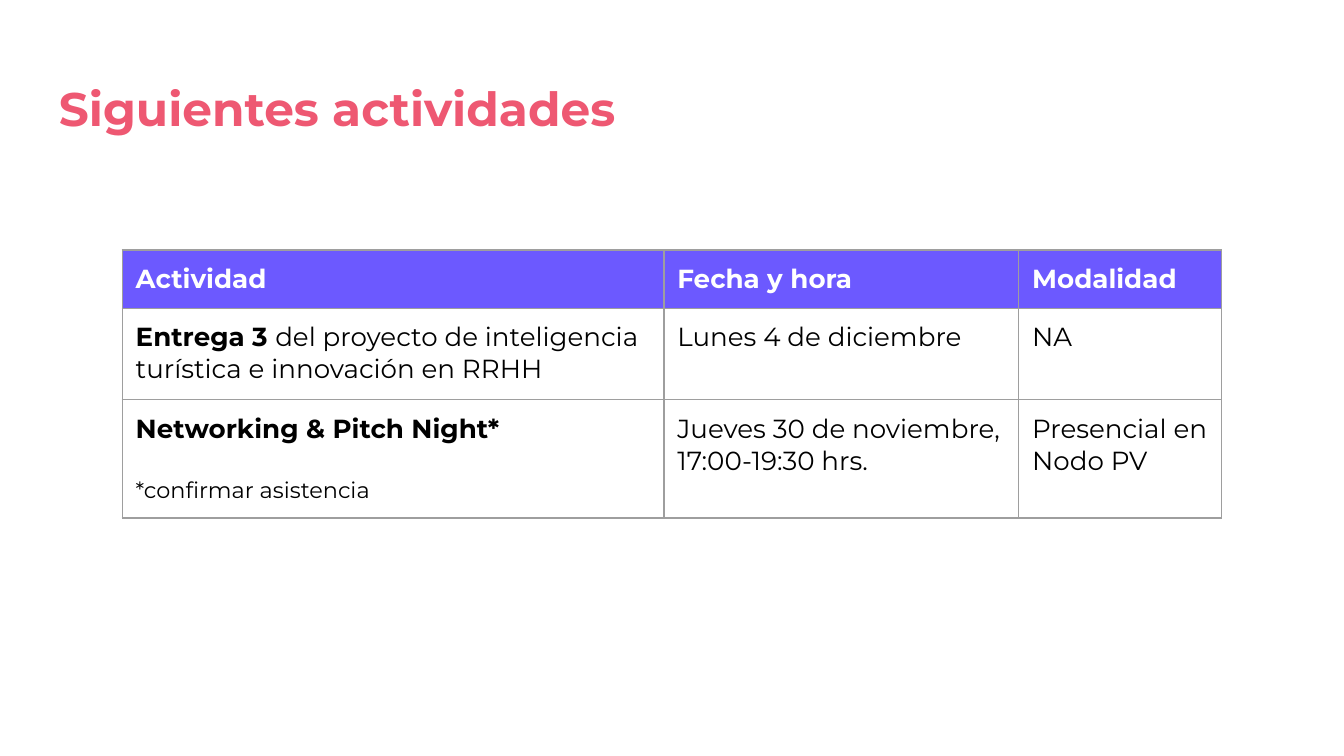
from typing import NamedTuple

from lxml import etree
from pptx import Presentation
from pptx import util as u
from pptx.dml.color import RGBColor
from pptx.enum import text
from pptx.oxml.ns import qn

WIDTH = 10
HEIGHT = WIDTH * 9 / 16
FONT = "Montserrat"
CORAL, VIOLET, WHITE, BLACK, GREY = "EE5872", "6C59FF", "FFFFFF", "000000", "9E9E9E"
INSET = u.Inches(0.1)


class Span(NamedTuple):
    words: str
    bold: bool = False
    size: float = 14


class Activity(NamedTuple):
    """One table row: the name is a list of paragraphs, each a list of spans."""
    name: list[list[Span]]
    date: str
    mode: str
    height: float


HEADINGS = ["Actividad", "Fecha y hora", "Modalidad"]
COLUMN_WIDTHS = [4.03, 2.64, 1.51]
TABLE_LEFT, TABLE_TOP = 0.91, 1.86
HEADER_HEIGHT = 0.43
ACTIVITIES = [
    Activity([[Span("Entrega 3 ", bold=True),
               Span("del proyecto de inteligencia turística e innovación en RRHH")]],
             "Lunes 4 de diciembre", "NA", 0.68),
    Activity([[Span("Networking & Pitch Night*", bold=True)],
              [Span("*confirmar asistencia", size=12)]],
             "Jueves 30 de noviembre, 17:00-19:30 hrs.", "Presencial en Nodo PV", 0.88),
]


def color(value: str) -> RGBColor:
    return RGBColor.from_string(value)


def write(frame, paragraphs: list[list[Span]], *, ink: str = BLACK, gap: float = 17) -> None:
    """Fill a text frame; gap is the space in points between paragraphs."""
    frame.word_wrap = True
    for index, spans in enumerate(paragraphs):
        para = frame.add_paragraph() if index else frame.paragraphs[0]
        para.alignment = text.PP_ALIGN.LEFT
        if index:
            para.space_before = u.Pt(gap)
        for span in spans:
            run = para.add_run()
            run.text = span.words
            run.font.name = FONT
            run.font.size = u.Pt(span.size)
            run.font.bold = span.bold
            run.font.color.rgb = color(ink)


def add_borders(cell, line: str, points: float) -> None:
    properties = cell._tc.get_or_add_tcPr()
    for side in ("lnL", "lnR", "lnT", "lnB"):
        edge = etree.SubElement(properties, qn(f"a:{side}"), w=str(u.Pt(points)))
        fill = etree.SubElement(edge, qn("a:solidFill"))
        etree.SubElement(fill, qn("a:srgbClr"), val=line)


def fill_cell(cell, paragraphs: list[list[Span]], *, ink: str = BLACK,
              background: str | None = None) -> None:
    cell.margin_left = cell.margin_right = cell.margin_top = cell.margin_bottom = INSET
    write(cell.text_frame, paragraphs, ink=ink)
    add_borders(cell, GREY, 0.75)
    if background:
        cell.fill.solid()
        cell.fill.fore_color.rgb = color(background)
    else:
        cell.fill.background()


def add_title(page, words: str) -> None:
    box = page.shapes.add_textbox(u.Inches(0.34), u.Inches(0.49),
                                  u.Inches(WIDTH - 2 * 0.34), u.Inches(0.63))
    frame = box.text_frame
    frame.margin_left = frame.margin_right = frame.margin_top = frame.margin_bottom = INSET
    write(frame, [[Span(words, bold=True, size=25.2)]], ink=CORAL)


def add_schedule(page) -> None:
    heights = [HEADER_HEIGHT] + [activity.height for activity in ACTIVITIES]
    table = page.shapes.add_table(
        len(heights), len(COLUMN_WIDTHS), u.Inches(TABLE_LEFT), u.Inches(TABLE_TOP),
        u.Inches(sum(COLUMN_WIDTHS)), u.Inches(sum(heights))).table
    table.first_row = table.horz_banding = False
    for column, width in zip(table.columns, COLUMN_WIDTHS):
        column.width = u.Inches(width)
    for row, height in zip(table.rows, heights):
        row.height = u.Inches(height)
    for column, heading in enumerate(HEADINGS):
        fill_cell(table.cell(0, column), [[Span(heading, bold=True)]],
                  ink=WHITE, background=VIOLET)
    for row, activity in enumerate(ACTIVITIES, start=1):
        contents = [activity.name, [[Span(activity.date)]], [[Span(activity.mode)]]]
        for column, paragraphs in enumerate(contents):
            fill_cell(table.cell(row, column), paragraphs)


def main() -> None:
    deck = Presentation()
    deck.slide_width, deck.slide_height = u.Inches(WIDTH), u.Inches(HEIGHT)
    page = deck.slides.add_slide(deck.slide_layouts[6])
    add_title(page, "Siguientes actividades")
    add_schedule(page)
    deck.save("out.pptx")


if __name__ == "__main__":
    main()
